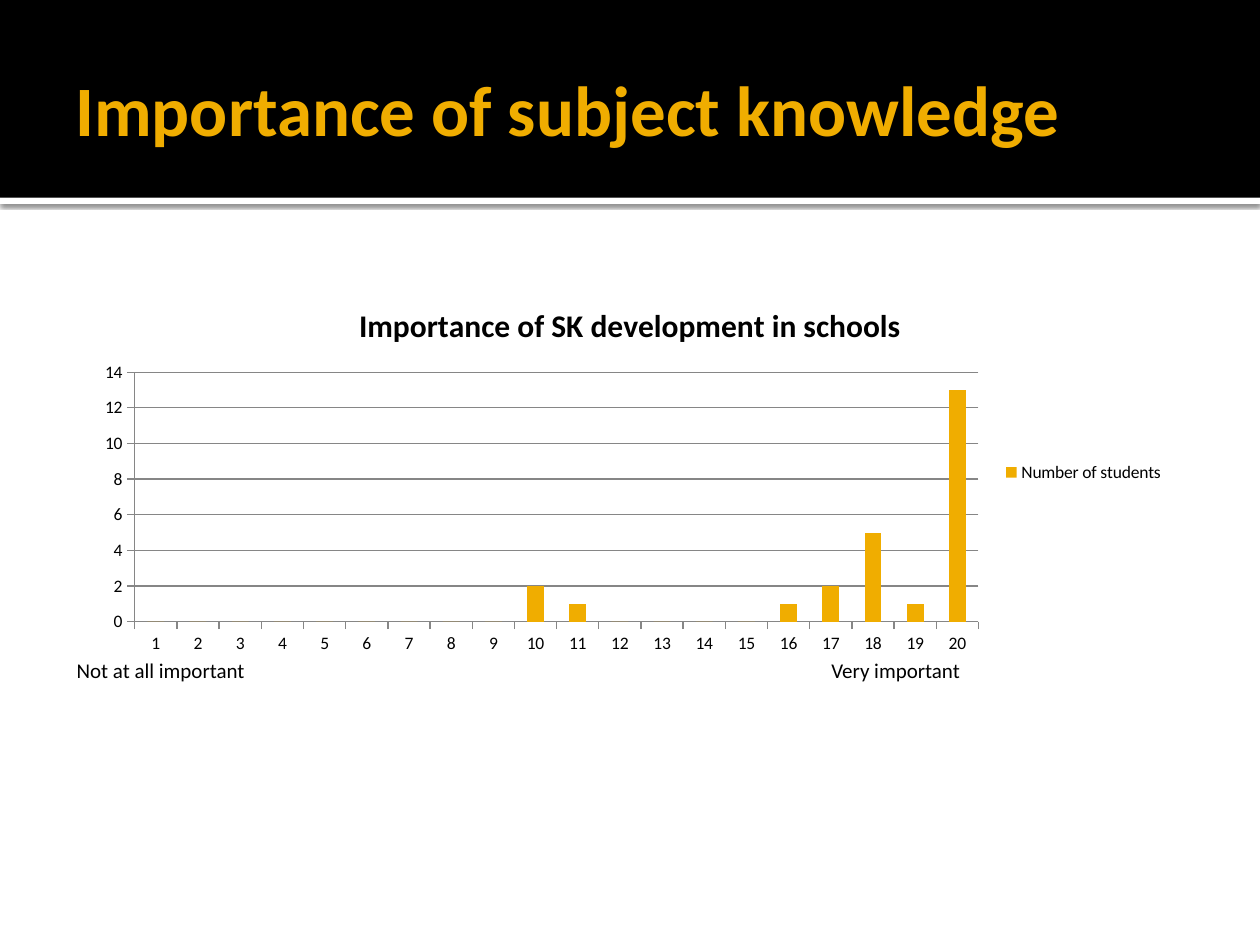
from dataclasses import dataclass

from lxml.etree import SubElement as Sub
from pptx import Presentation
from pptx.chart.data import CategoryChartData as Data
from pptx.dml.color import RGBColor as Rgb
from pptx.enum.chart import XL_CHART_TYPE as Kind
from pptx.enum.chart import XL_LEGEND_POSITION as Spot
from pptx.enum.chart import XL_TICK_MARK as Tick
from pptx.enum.shapes import MSO_SHAPE as Form
from pptx.enum.text import MSO_ANCHOR as Anchor
from pptx.oxml.ns import qn
from pptx.util import Pt


@dataclass(frozen=True)
class Theme:
    """Colours, face and type sizes of the slide."""
    gold: Rgb = Rgb(0xF0, 0xAD, 0x00)
    black: Rgb = Rgb(0, 0, 0)
    white: Rgb = Rgb(255, 255, 255)
    grey: Rgb = Rgb(0x86, 0x86, 0x86)
    face: str = "Calibri"
    head: float = 40.5
    title: float = 18
    note: float = 12
    small: float = 10


THEME = Theme()


def style(font, size, color, bold=False):
    """Set face, size, colour and weight of a font."""
    font.name, font.size, font.bold = THEME.face, Pt(size), bold
    font.color.rgb = color


def add_band(slide, top, high, color):
    """Add a full-width band without an outline."""
    band = slide.shapes.add_shape(Form.RECTANGLE, 0, Pt(top), Pt(720), Pt(high))
    band.shadow.inherit = False
    band.fill.solid()
    band.fill.fore_color.rgb = color
    band.line.fill.background()
    return band


def add_glow(band):
    """Give a band a soft black shadow below it."""
    root = band.element.spPr.find(qn("a:effectLst"))
    shade = Sub(root, qn("a:outerShdw"), blurRad=str(Pt(2.5)), dist=str(Pt(0.8)),
                dir="5400000", algn="tl", rotWithShape="0")
    tint = Sub(shade, qn("a:srgbClr"), val=str(THEME.black))
    Sub(tint, qn("a:alpha"), val="60000")


def add_text(slide, text, box, size, color, bold=False):
    """Add a wrapped line of text and return its frame."""
    frame = slide.shapes.add_textbox(*map(Pt, box)).text_frame
    frame.word_wrap = True
    line = frame.paragraphs[0]
    line.text = text
    style(line.font, size, color, bold)
    return frame


def add_bars(slide, box):
    """Add the column chart of student ratings."""
    votes = {10: 2, 11: 1, 16: 1, 17: 2, 18: 5, 19: 1, 20: 13}
    marks = range(1, 21)
    data = Data()
    data.categories = [str(mark) for mark in marks]
    data.add_series("Number of students", [votes.get(mark, 0) for mark in marks])
    chart = slide.shapes.add_chart(Kind.COLUMN_CLUSTERED, *map(Pt, box), data).chart
    style(chart.font, THEME.small, THEME.black)

    chart.has_title = True
    title = chart.chart_title.text_frame
    title.text = "Importance of SK development in schools"
    style(title.paragraphs[0].font, THEME.title, THEME.black, True)
    chart.chart_title.include_in_layout = False

    chart.has_legend = True
    chart.legend.position = Spot.RIGHT
    chart.legend.include_in_layout = False

    plot = chart.plots[0]
    plot.gap_width = 150
    plot.vary_by_categories = False
    fill = plot.series[0].format.fill
    fill.solid()
    fill.fore_color.rgb = THEME.gold

    scale = chart.value_axis
    scale.minimum_scale, scale.maximum_scale, scale.major_unit = 0, 14, 2
    scale.has_major_gridlines = True
    for axis in (chart.category_axis, scale):
        axis.major_tick_mark = Tick.OUTSIDE
        axis.minor_tick_mark = Tick.NONE
    for part in (chart.category_axis, scale, scale.major_gridlines):
        part.format.line.color.rgb = THEME.grey
        part.format.line.width = Pt(0.75)


def main():
    """Build and save the slide."""
    deck = Presentation()
    deck.slide_width, deck.slide_height = Pt(720), Pt(540)
    slide = deck.slides.add_slide(deck.slide_layouts[6])
    slide.background.fill.solid()
    slide.background.fill.fore_color.rgb = THEME.white

    add_glow(add_band(slide, 113, 3.6, THEME.white))
    add_band(slide, 0, 113, THEME.black)
    head = add_text(slide, "Importance of subject knowledge",
                    (36, 12.25, 648, 98.65), THEME.head, THEME.gold, True)
    head.vertical_anchor = Anchor.MIDDLE
    head.margin_right = Pt(3.6)

    add_bars(slide, (47.5, 162, 625, 216))
    for text, left in (("Not at all important", 36.7), ("Very important", 468)):
        add_text(slide, text, (left, 372.25, 136, 21.6), THEME.note, THEME.black)
    deck.save("out.pptx")


if __name__ == "__main__":
    main()
